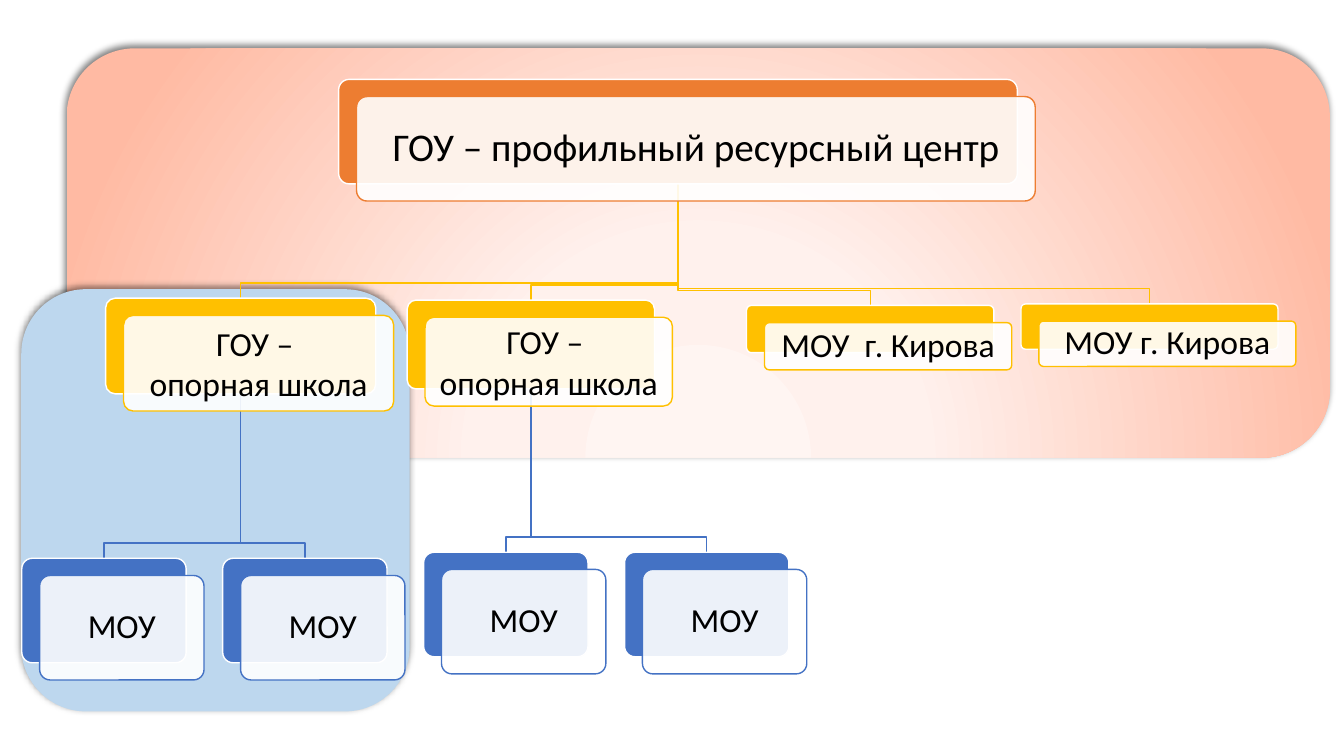
from lxml import etree
from pptx import Presentation
from pptx import util as u
from pptx.dml.color import RGBColor
from pptx.enum import shapes, text
from pptx.oxml import ns

HUES = {"ink": "000000", "white": "FFFFFF", "orange": "ED7D31",
        "gold": "FFC000", "blue": "4472C4", "sky": "BDD7EE"}
GLOW = [(0, "FFF5F2"), (34, "FFF1ED"), (100, "FFBAA3")]
WIDE, HIGH = u.Inches(13.33), u.Inches(7.5)
COL, ROW = WIDE / 100, HIGH / 100
SHIFT = (1.33, 2.27)
BEND = 2


def rgb(name):
    """Return a named colour."""
    return RGBColor.from_string(HUES[name])


def node(up, tag, **attrs):
    """Add a drawing element under another one."""
    return etree.SubElement(up, ns.qn("a:" + tag), attrs)


def block(slide, area, fill=None, line=None, adj=None):
    """Draw a rounded box on the 100 by 100 grid."""
    x, y, w, h = area
    box = slide.shapes.add_shape(
        shapes.MSO_SHAPE.ROUNDED_RECTANGLE,
        round(x * COL), round(y * ROW), round(w * COL), round(h * ROW))
    box.shadow.inherit = False
    if adj:
        box.adjustments[0] = adj
    if fill:
        box.fill.solid()
        box.fill.fore_color.rgb = rgb(fill)
    if line:
        box.line.color.rgb = rgb(line)
        box.line.width = u.Pt(1)
    else:
        box.line.fill.background()
    return box


def shade(box):
    """Cast a soft shadow up and to the left."""
    fx = box.element.spPr.find(ns.qn("a:effectLst"))
    cast = node(fx, "outerShdw", blurRad=str(u.Pt(5)), dist=str(u.Pt(2)),
                dir=str(245 * 60000), algn="ctr", rotWithShape="0")
    tint = node(cast, "srgbClr", val=HUES["ink"])
    node(tint, "alpha", val="50000")


def glow(box):
    """Fill a box with light that spreads from below its lower edge."""
    box.fill.gradient()
    grad = box.element.spPr.find(ns.qn("a:gradFill"))
    for kid in list(grad):
        grad.remove(kid)
    stops = node(grad, "gsLst")
    for pos, tint in GLOW:
        stop = node(stops, "gs", pos=str(pos * 1000))
        node(stop, "srgbClr", val=tint)
    ring = node(grad, "path", path="circle")
    node(ring, "fillToRect", l="50000", t="155000", r="50000", b="-55000")


def write(box, lines, size):
    """Set centred lines of text in a box."""
    frame = box.text_frame
    frame.word_wrap = True
    frame.vertical_anchor = text.MSO_ANCHOR.MIDDLE
    frame.margin_left = frame.margin_right = u.Inches(0.08)
    frame.margin_top = frame.margin_bottom = 0
    for i, line in enumerate(lines):
        para = frame.add_paragraph() if i else frame.paragraphs[0]
        para.alignment = text.PP_ALIGN.CENTER
        para.line_spacing = 1.0 if len(lines) > 1 else 0.9
        run = para.add_run()
        run.text = line
        run.font.size = u.Pt(size)
        run.font.name = "Calibri"
        run.font.color.rgb = rgb("ink")


def card(slide, area, hue, lines, size=24):
    """Draw a solid plate with a translucent text plate over it."""
    block(slide, area, hue, "white", 0.1)
    x, y, w, h = area
    front = block(slide, (x + SHIFT[0], y + SHIFT[1], w, h), "white", hue, 0.1)
    tint = front.element.spPr.find(ns.qn("a:solidFill"))[0]
    node(tint, "alpha", val="90000")
    write(front, lines, size)


def link(slide, top, low, hue):
    """Run a bent line from the foot of one plate to the head of another."""
    x, y = top[0] + top[2] / 2, top[1] + top[3]
    end, head = low[0] + low[2] / 2, low[1]
    pen = slide.shapes.build_freeform(round(x * COL), round(y * ROW))
    turns = [(x, head - BEND), (end, head - BEND), (end, head)]
    pen.add_line_segments(
        [(round(a * COL), round(b * ROW)) for a, b in turns], close=False)
    line = pen.convert_to_shape()
    line.shadow.inherit = False
    line.fill.background()
    line.line.color.rgb = rgb(hue)
    line.line.width = u.Pt(1)


def main():
    """Build the slide of the school network."""
    deck = Presentation()
    deck.slide_width, deck.slide_height = WIDE, HIGH
    slide = deck.slides.add_slide(deck.slide_layouts[6])

    zone = block(slide, (4.95, 6.4, 94, 54.15))
    glow(zone)
    shade(zone)
    shade(block(slide, (1.58, 38.25, 28.9, 55.85), "sky"))

    root = (25.2, 10.5, 50.5, 13.82)
    school = ["ГОУ – ", "опорная школа"]
    units = [((7.86, 39.45, 20.1, 12.65), school, 73.85),
             ((30.3, 39.7, 18.4, 11.75), school, 73.05),
             ((55.55, 40.4, 18.4, 6.25), ["МОУ  г. Кирова"], None),
             ((75.97, 40.2, 19.12, 6), ["МОУ г. Кирова"], None)]
    leaves = []
    for area, _, row in units:
        link(slide, root, area, "gold")
        for _ in range(2 if row else 0):
            leaf = (1.62 + 14.95 * len(leaves), row, 12.23, 13.82)
            link(slide, area, leaf, "blue")
            leaves.append(leaf)

    card(slide, root, "orange", ["ГОУ – профильный ресурсный центр"], 28)
    for area, lines, _ in units:
        card(slide, area, "gold", lines)
    for leaf in leaves:
        card(slide, leaf, "blue", ["МОУ"])
    deck.save("out.pptx")


if __name__ == "__main__":
    main()
